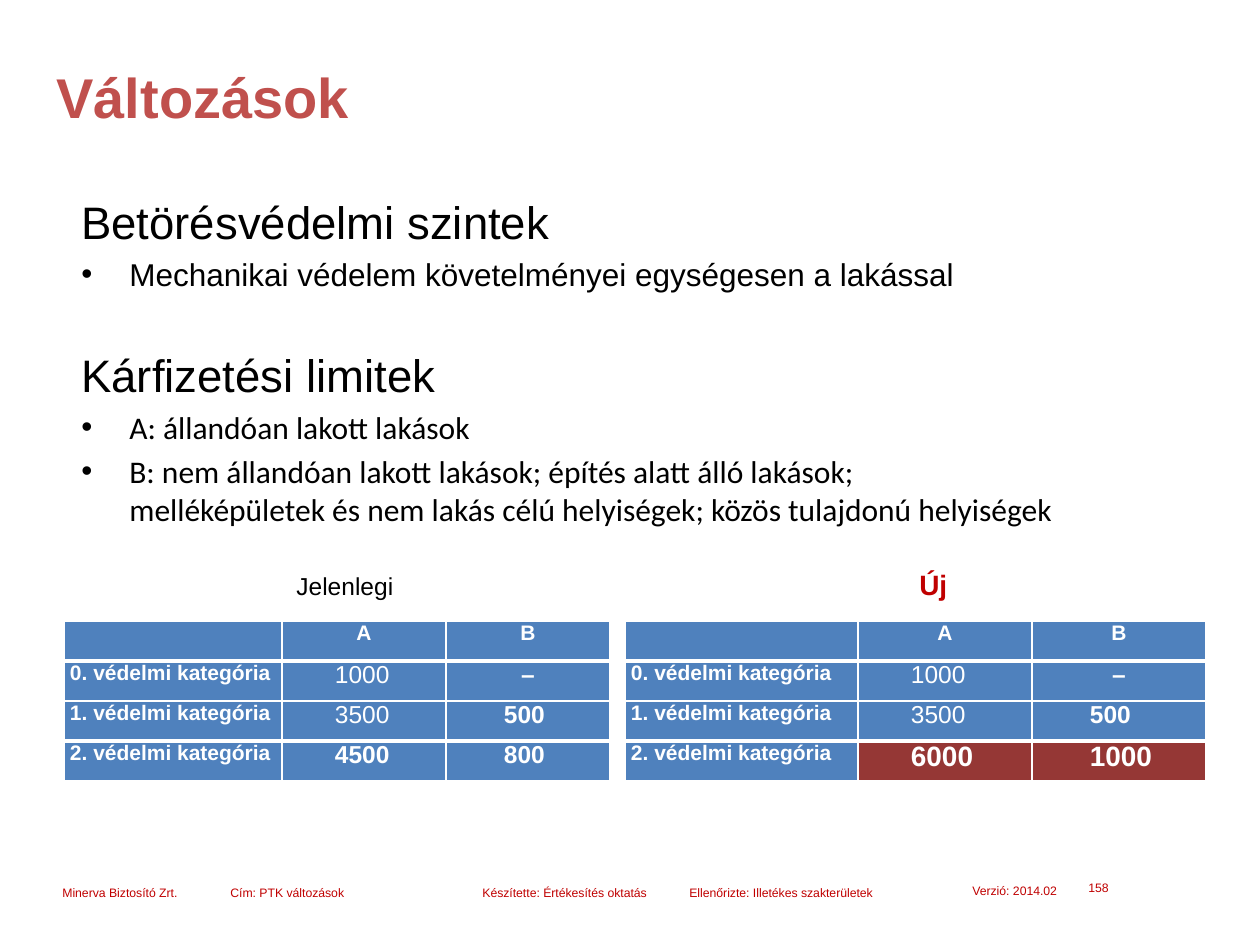
"""Builds the slide on changed protection levels and payment limits."""
from lxml.etree import SubElement
from pptx import Presentation
from pptx.dml.color import RGBColor
from pptx.enum.text import MSO_ANCHOR, PP_ALIGN
from pptx.oxml.ns import qn
from pptx.util import Emu, Pt

COLORS = {
    "title": "C0504D",
    "text": "000000",
    "accent": "C00000",
    "cell": "4F81BD",
    "changed": "953735",
    "white": "FFFFFF",
}


def px(n):
    return Emu(round(n * 914400 / 126))


def rgb(name):
    return RGBColor.from_string(COLORS[name])


def write(p, text, size=18, font="Arial", color="text", bold=False,
          before=0, left=0, bullet=False, tabs=(), align=None):
    pPr = p._p.get_or_add_pPr()
    if before:
        p.space_before = Pt(before)
    if align:
        p.alignment = align
    if left:
        pPr.set("marL", str(px(left)))
    if bullet:
        pPr.set("indent", str(-px(left)))
        SubElement(pPr, qn("a:buFont"), typeface="Arial")
        SubElement(pPr, qn("a:buChar"), char="•")
    if tabs:
        tab_list = SubElement(pPr, qn("a:tabLst"))
        for tab in tabs:
            SubElement(tab_list, qn("a:tab"), pos=str(px(tab)), algn="l")
    for i, line in enumerate(text.split("\n")):
        if i:
            p.add_line_break()
        r = p.add_run()
        r.text = line
        r.font.name, r.font.size, r.font.bold = font, Pt(size), bold
        r.font.color.rgb = rgb(color)


class Deck:
    def __init__(self):
        self.prs = Presentation()
        self.prs.slide_width, self.prs.slide_height = px(1260), px(945)
        self.s = self.prs.slides.add_slide(self.prs.slide_layouts[6])

    def text(self, box, paragraphs, anchor=MSO_ANCHOR.TOP):
        tf = self.s.shapes.add_textbox(*map(px, box)).text_frame
        tf.word_wrap = True
        tf.vertical_anchor = anchor
        for i, (text, style) in enumerate(paragraphs):
            p = tf.add_paragraph() if i else tf.paragraphs[0]
            write(p, text, **style)
        return tf

    def border(self, cell, widths):
        tcPr = cell._tc.get_or_add_tcPr()
        for side, width in zip("LRTB", widths):
            ln = SubElement(tcPr, qn(f"a:ln{side}"), w=str(Pt(width)))
            fill = SubElement(ln, qn("a:solidFill"))
            SubElement(fill, qn("a:srgbClr"), val=COLORS["white"])

    def table(self, x, y, widths, row_height, rows, fills):
        shape = self.s.shapes.add_table(
            len(rows), len(widths), px(x), px(y),
            px(sum(widths)), px(row_height * len(rows)))
        table = shape.table
        table.first_row = table.horz_banding = False
        for column, width in zip(table.columns, widths):
            column.width = px(width)
        last = len(rows) - 1
        for i, row in enumerate(rows):
            table.rows[i].height = px(row_height)
            top = 3 if i in (1, last) else 1
            bottom = 3 if i in (0, last - 1) else 1
            for j, (text, style) in enumerate(row):
                cell = table.cell(i, j)
                cell.margin_left = cell.margin_right = 0
                cell.margin_top = cell.margin_bottom = 0
                self.border(cell, (1, 1, top, bottom))
                cell.fill.solid()
                cell.fill.fore_color.rgb = rgb(fills.get((i, j), "cell"))
                if text:
                    write(cell.text_frame.paragraphs[0], text,
                          color="white", **style)


def limit_rows(limits, limit_size):
    head = dict(size=12, bold=True, align=PP_ALIGN.CENTER)
    label = dict(size=12, bold=True, left=6)
    plain = dict(size=14, left=53)
    dash = dict(size=14, bold=True, align=PP_ALIGN.CENTER)
    bold = dict(size=14, bold=True, left=58)
    top_a = dict(size=limit_size, bold=True, left=53)
    top_b = dict(size=limit_size, bold=True, left=58)
    values = [
        [("1000", plain), ("–", dash)],
        [("3500", plain), ("500", bold)],
        list(zip(limits, (top_a, top_b))),
    ]
    return [[("", head), ("A", head), ("B", head)]] + [
        [(f"{i}. védelmi kategória", label), *row]
        for i, row in enumerate(values)]


def main():
    deck = Deck()
    footer = [
        (1076, 874, 58, "158"),
        (50, 879, 159, "Minerva Biztosító Zrt."),
        (218, 879, 159, "Cím: PTK változások"),
        (470, 879, 207, "Készítette: Értékesítés oktatás"),
        (960, 877, 146, "Verzió: 2014.02"),
        (677, 879, 222, "Ellenőrizte: Illetékes szakterületek"),
    ]
    for x, y, width, text in footer:
        deck.text((x, y, width, 28), [(text, dict(size=7, color="accent"))])

    deck.text((44, 55, 1063, 83),
              [("Változások", dict(size=32, color="title", bold=True))],
              MSO_ANCHOR.MIDDLE)

    item = dict(left=48, bullet=True, before=3.6)
    tf = deck.text((69, 188, 1111, 622), [
        ("Betörésvédelmi szintek", dict(size=26)),
        ("Mechanikai védelem követelményei egységesen a lakással", item),
        ("Kárfizetési limitek", dict(size=26, before=31)),
        ("A: állandóan lakott lakások", dict(item, font="Calibri")),
        ("B: nem állandóan lakott lakások; építés alatt álló lakások;\n"
         "melléképületek és nem lakás célú helyiségek; "
         "közös tulajdonú helyiségek", dict(item, font="Calibri")),
        ("\tJelenlegi\t", dict(size=14, before=23, tabs=(215, 838))),
    ])
    write(tf.paragraphs[-1], "Új", size=16, color="accent", bold=True)

    deck.table(625, 621, (233, 174, 174), 40,
               limit_rows(("6000", "1000"), 16),
               {(3, 1): "changed", (3, 2): "changed"})
    deck.table(64, 621, (218, 164, 164), 40,
               limit_rows(("4500", "800"), 14), {})
    deck.prs.save("out.pptx")


if __name__ == "__main__":
    main()
